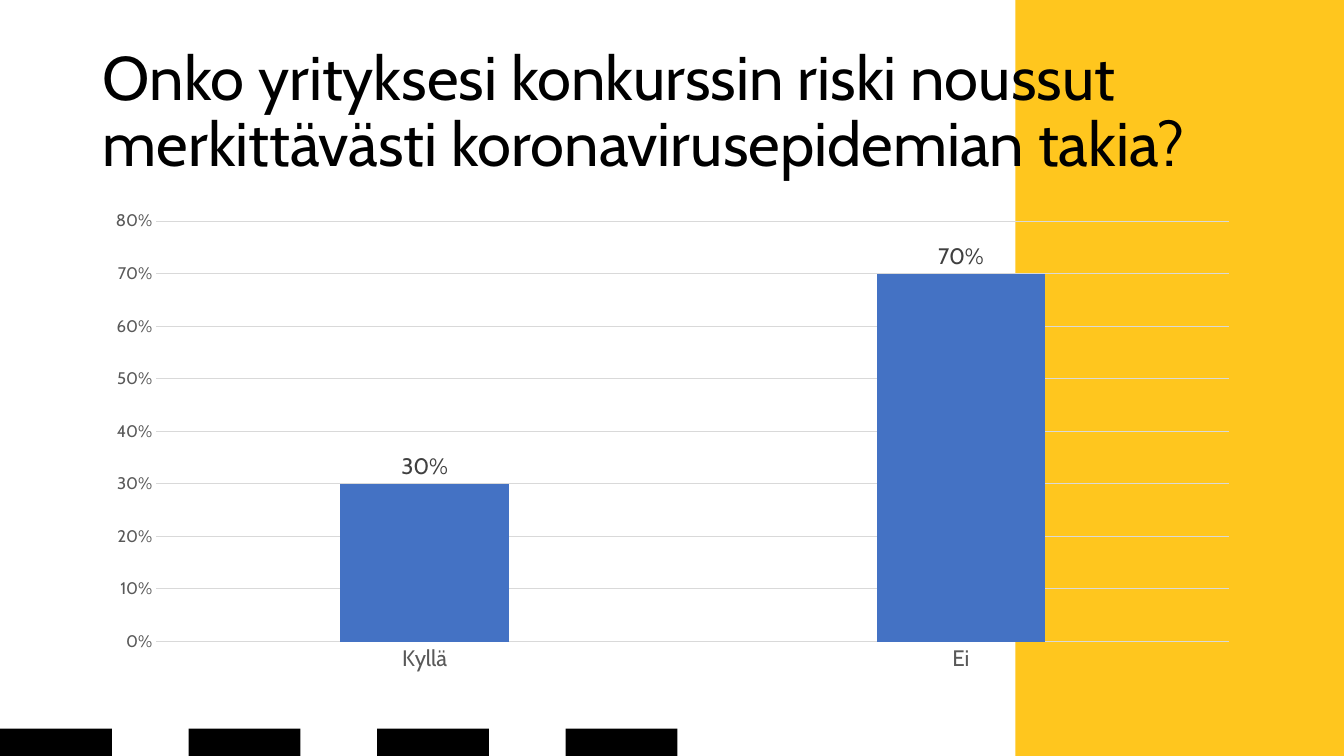
from pptx import Presentation
from pptx.chart.data import CategoryChartData
from pptx.dml.color import RGBColor
from pptx.enum.chart import XL_CHART_TYPE, XL_LABEL_POSITION, XL_TICK_MARK
from pptx.enum.shapes import MSO_SHAPE
from pptx.enum.text import MSO_ANCHOR, MSO_AUTO_SIZE, PP_ALIGN
from pptx.util import Inches, Pt

# Content
TITLE = "Onko yrityksesi konkurssin riski noussut merkittävästi koronavirusepidemian takia?"
ANSWERS = {"Kyllä": 0.3, "Ei": 0.7}
FACE = "Cabin"
YELLOW, BLACK, BLUE = "FFC61E", "000000", "4472C4"
GRID, GREY, DARK = "D9D9D9", "595959", "404040"

# Layout in inches
WIDE, HIGH = 13.33, 7.5
LEFT, SPAN = 0.92, 11.5
PANEL = 10.07
DASHES, PITCH, DASH_W, DASH_H = 4, 1.87, 1.11, 0.27


def paint(fill, color):
    fill.solid()
    fill.fore_color.rgb = RGBColor.from_string(color)


def style(font, size, color):
    font.name = FACE
    font.size = Pt(size)
    font.color.rgb = RGBColor.from_string(color)


def stroke(line, color):
    paint(line.fill, color)
    line.width = Pt(0.75)


def block(x, y, w, h, color):
    shape = slide.shapes.add_shape(
        MSO_SHAPE.RECTANGLE, Inches(x), Inches(y), Inches(w), Inches(h))
    shape.shadow.inherit = False
    paint(shape.fill, color)
    shape.line.fill.background()


deck = Presentation()
deck.slide_width, deck.slide_height = Inches(WIDE), Inches(HIGH)
slide = deck.slides.add_slide(deck.slide_layouts[5])

# Yellow panel and the row of black dashes
block(PANEL, 0, WIDE - PANEL, HIGH, YELLOW)
for i in range(DASHES):
    block(i * PITCH, HIGH - DASH_H, DASH_W, DASH_H, BLACK)

# Title, raised above the panel
title = slide.shapes.title
title.element.getparent().append(title.element)
title.left, title.top = Inches(LEFT), Inches(0.4)
title.width, title.height = Inches(SPAN), Inches(1.45)
frame = title.text_frame
frame.text = TITLE
frame.word_wrap = True
frame.auto_size = MSO_AUTO_SIZE.NONE
frame.vertical_anchor = MSO_ANCHOR.MIDDLE
para = frame.paragraphs[0]
para.alignment = PP_ALIGN.LEFT
para.line_spacing = 0.9
style(para.font, 44, BLACK)

# Column chart
data = CategoryChartData(number_format="0%")
data.categories = list(ANSWERS)
data.add_series("Series 1", list(ANSWERS.values()))
chart = slide.shapes.add_chart(
    XL_CHART_TYPE.COLUMN_CLUSTERED, Inches(LEFT), Inches(2),
    Inches(SPAN), Inches(4.76), data).chart
chart.has_title = chart.has_legend = False
style(chart.font, 10, BLACK)

plot = chart.plots[0]
plot.gap_width, plot.overlap = 219, -27
plot.vary_by_categories = False
bars = plot.series[0]
paint(bars.format.fill, BLUE)
labels = bars.data_labels
labels.show_value = True
labels.number_format, labels.number_format_is_linked = "0%", False
labels.position = XL_LABEL_POSITION.OUTSIDE_END
style(labels.font, 16, DARK)

# Axes
cats, vals = chart.category_axis, chart.value_axis
for axis, size in ((cats, 16), (vals, 12)):
    axis.major_tick_mark = axis.minor_tick_mark = XL_TICK_MARK.NONE
    style(axis.tick_labels.font, size, GREY)
stroke(cats.format.line, GRID)
vals.format.line.fill.background()
vals.has_major_gridlines = True
stroke(vals.major_gridlines.format.line, GRID)
vals.minimum_scale, vals.maximum_scale, vals.major_unit = 0, 0.8, 0.1
vals.tick_labels.number_format = "0%"
vals.tick_labels.number_format_is_linked = False

deck.save("out.pptx")
